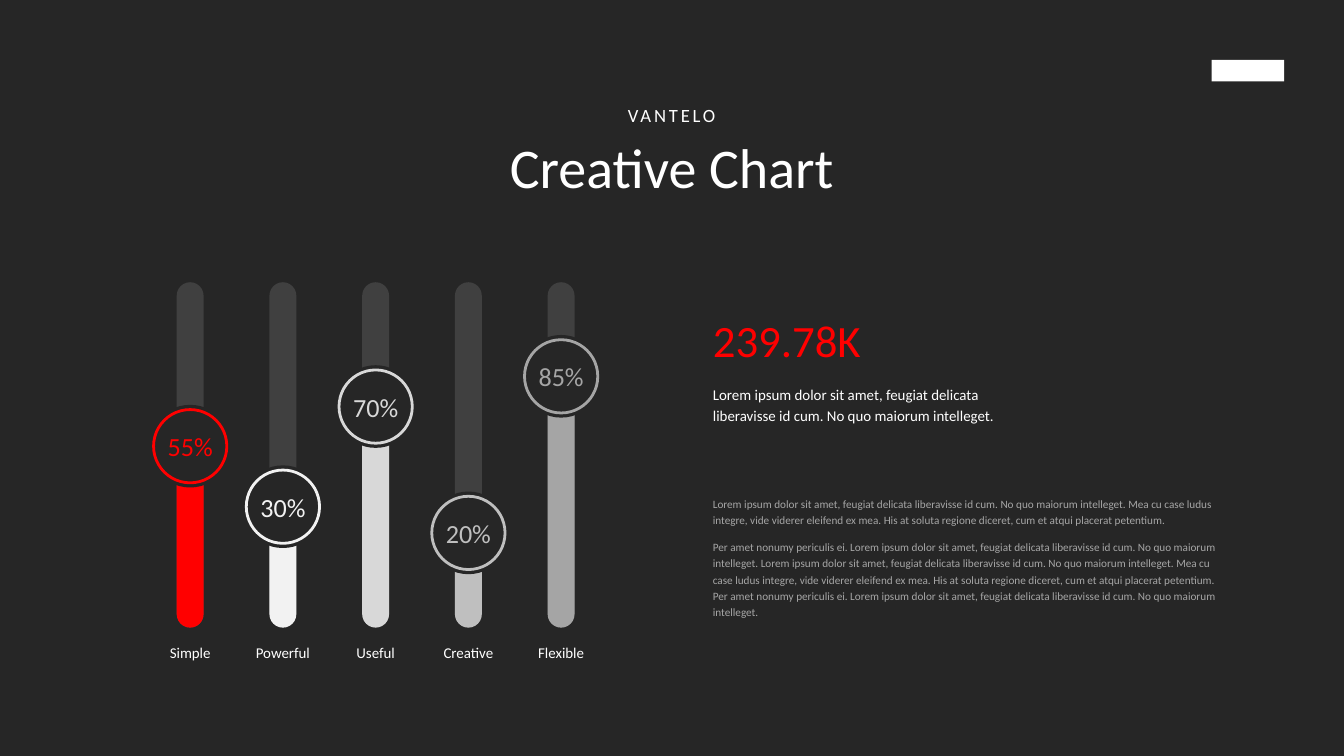
from pptx import Presentation
from pptx.dml.color import RGBColor
from pptx.enum.shapes import MSO_SHAPE
from pptx.enum.text import MSO_ANCHOR, MSO_AUTO_SIZE, PP_ALIGN
from pptx.util import Inches, Pt

BAR, CIRCLE, BLOCK = MSO_SHAPE.ROUNDED_RECTANGLE, MSO_SHAPE.OVAL, MSO_SHAPE.RECTANGLE
LEFT, CENTER = PP_ALIGN.LEFT, PP_ALIGN.CENTER
FONT = "Calibri"
BACKGROUND, TRACK, WHITE, RED, GRAY = "262626", "404040", "FFFFFF", "FF0000", "A6A6A6"
rgb = RGBColor.from_string

prs = Presentation()
prs.slide_width, prs.slide_height = Inches(20), Inches(11.25)
s = prs.slides.add_slide(prs.slide_layouts[5])
s.background.fill.solid()
s.background.fill.fore_color.rgb = rgb(BACKGROUND)


def add_shape(kind, x, y, w, h, fill=None, line=None):
    sp = s.shapes.add_shape(kind, Inches(x), Inches(y), Inches(w), Inches(h))
    sp.shadow.inherit = False
    if fill:
        sp.fill.solid()
        sp.fill.fore_color.rgb = rgb(fill)
    else:
        sp.fill.background()
    if line:
        sp.line.color.rgb = rgb(line)
        sp.line.width = Pt(3)
    else:
        sp.line.fill.background()
    return sp


def add_text(x, y, w, h, paragraphs, size, color, align=LEFT, before=0, spacing=1.0):
    tf = s.shapes.add_textbox(Inches(x), Inches(y), Inches(w), Inches(h)).text_frame
    tf.word_wrap = True
    tf.text = "\n".join(paragraphs)
    for p in tf.paragraphs:
        p.alignment, p.line_spacing, p.space_before = align, spacing, Pt(before)
        p.font.name, p.font.size, p.font.color.rgb = FONT, Pt(size), rgb(color)


# Heading
title = s.shapes.title
title.left, title.top, title.width, title.height = (
    Inches(5.97), Inches(1.5), Inches(8.05), Inches(1.53))
tf = title.text_frame
tf.auto_size, tf.vertical_anchor = MSO_AUTO_SIZE.NONE, MSO_ANCHOR.TOP
tf.text = "VANTELO\nCreative Chart"
for p, size, before in zip(tf.paragraphs, (20, 60), (12, 6)):
    p.alignment, p.space_before = CENTER, Pt(before)
    p.font.name, p.font.size, p.font.color.rgb = FONT, Pt(size), rgb(WHITE)
tf.paragraphs[0].runs[0].font._element.set("spc", "300")

# Plain block in the logo's place
add_shape(BLOCK, 18.03, 0.89, 1.08, 0.32, WHITE)

# Sliders: label, value, knob centre, colour
sliders = [
    ("Simple", "55%", 6.64, RED),
    ("Powerful", "30%", 7.54, "F2F2F2"),
    ("Useful", "70%", 6.05, "D8D8D8"),
    ("Creative", "20%", 7.93, "BFBFBF"),
    ("Flexible", "85%", 5.6, "A5A5A5"),
]
PITCH, BAR_W, BAR_TOP, BAR_BOTTOM = 1.38, 0.4, 4.2, 9.34
KNOB, RING = 1.23, 1.09
for i, (label, value, cy, color) in enumerate(sliders):
    cx = 2.83 + i * PITCH
    for top, fill in ((BAR_TOP, TRACK), (cy - 0.17, color)):
        bar = add_shape(BAR, cx - BAR_W / 2, top, BAR_W, BAR_BOTTOM - top, fill)
        bar.adjustments[0] = 0.5
    add_shape(CIRCLE, cx - KNOB / 2, cy - KNOB / 2, KNOB, KNOB, fill=BACKGROUND)
    add_shape(CIRCLE, cx - RING / 2, cy - RING / 2, RING, RING, line=color)
    add_text(cx - 0.5, cy - 0.28, 1, 0.57, [value], 28, color, CENTER)
    add_text(cx - PITCH / 2, 9.53, PITCH, 0.37, [label], 16, WHITE, CENTER)

# Key figure and description
TEXT_X = 10.51
LEAD = "Lorem ipsum dolor sit amet, feugiat delicata liberavisse id cum. No quo maiorum intelleget."
DETAIL = ("Mea cu case ludus integre, vide viderer eleifend ex mea. "
          "His at soluta regione diceret, cum et atqui placerat petentium.")
PER = "Per amet nonumy periculis ei."
add_text(TEXT_X, 4.6, 3.69, 0.91, ["239.78K"], 48, RED)
add_text(TEXT_X, 5.63, 4.85, 1.07, [LEAD], 16, WHITE, before=6, spacing=1.2)
add_text(TEXT_X, 7.31, 7.73, 2.19,
         [f"{LEAD} {DETAIL}", f"{PER} {LEAD} {LEAD} {DETAIL} {PER} {LEAD}"],
         12, GRAY, before=12, spacing=1.2)

prs.save("out.pptx")
